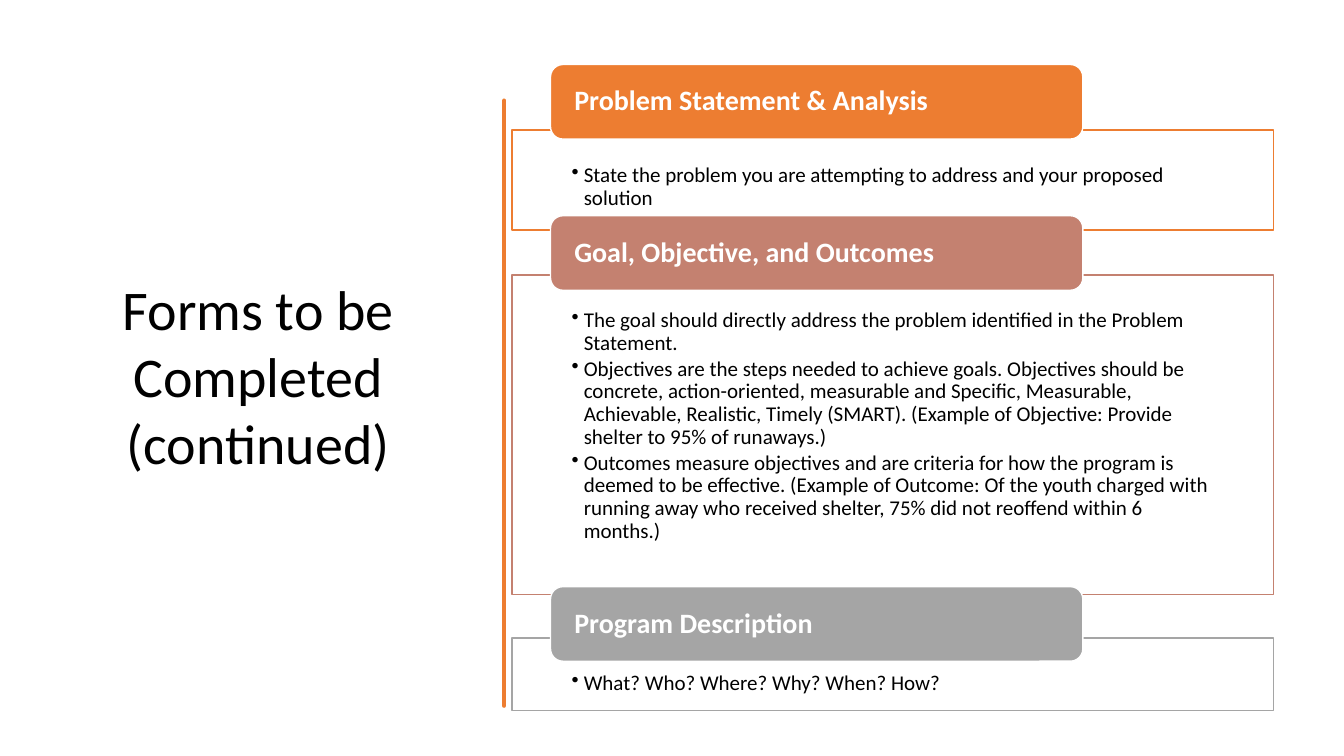
"""Build the slide listing the forms to be completed."""
import pptx
import pptx.util
import pptx.dml.color
import pptx.enum.shapes
import pptx.enum.text
import pptx.oxml.ns
import lxml.etree

Inches = pptx.util.Inches
Pt = pptx.util.Pt
RGBColor = pptx.dml.color.RGBColor
Shape = pptx.enum.shapes.MSO_SHAPE
Align = pptx.enum.text.PP_ALIGN
Anchor = pptx.enum.text.MSO_ANCHOR

ORANGE = RGBColor(0xED, 0x7D, 0x31)
ROSE = RGBColor(0xC4, 0x81, 0x70)
GRAY = RGBColor(0xA5, 0xA5, 0xA5)
WHITE = RGBColor(0xFF, 0xFF, 0xFF)
BLACK = RGBColor(0, 0, 0)

TITLE = "Forms to be Completed (continued)"
SECTIONS = [
    {"heading": "Problem Statement & Analysis", "color": ORANGE,
     "heading_top": 0.64, "body_top": 1.29, "body_height": 0.99,
     "points": ["State the problem you are attempting to address and your proposed solution"]},
    {"heading": "Goal, Objective, and Outcomes", "color": ROSE,
     "heading_top": 2.14, "body_top": 2.73, "body_height": 3.17,
     "points": [
         "The goal should directly address the problem identified in the Problem Statement.",
         "Objectives are the steps needed to achieve goals. Objectives should be concrete, "
         "action-oriented, measurable and Specific, Measurable, Achievable, Realistic, "
         "Timely (SMART). (Example of Objective: Provide shelter to 95% of runaways.)",
         "Outcomes measure objectives and are criteria for how the program is deemed to be "
         "effective. (Example of Outcome: Of the youth charged with running away who received "
         "shelter, 75% did not reoffend within 6 months.)"]},
    {"heading": "Program Description", "color": GRAY,
     "heading_top": 5.82, "body_top": 6.33, "body_height": 0.72,
     "points": ["What? Who? Where? Why? When? How?"]},
]
BODY_LEFT, BODY_WIDTH = 5.08, 7.55
HEADING_LEFT, HEADING_WIDTH, HEADING_HEIGHT = 5.46, 5.28, 0.74
BULLET_INDENT = 0.12

DIVIDER_RIGHT = [(4.75, 0.84), (4.76, 1.15), (4.74, 1.7), (4.75, 2.26), (4.75, 2.94),
                 (4.76, 3.3), (4.75, 3.56), (4.76, 4.0), (4.75, 4.36), (4.73, 4.7),
                 (4.75, 5.1), (4.76, 5.45), (4.75, 5.84), (4.74, 6.2), (4.75, 6.76)]
DIVIDER_LEFT = [(4.73, 6.76), (4.72, 6.4), (4.73, 6.13), (4.73, 5.57), (4.72, 5.1),
                (4.73, 4.77), (4.72, 4.45), (4.73, 4.15), (4.72, 3.75), (4.73, 3.35),
                (4.72, 2.9), (4.73, 2.5), (4.73, 2.1), (4.72, 1.75), (4.74, 1.3), (4.73, 0.84)]


def write_text(box, lines, size, color=BLACK, bold=False, align=Align.LEFT,
               anchor=Anchor.TOP, insets=(0.1, 0.05, 0.1, 0.05), spacing=None,
               after=0, bullet=False):
    frame = box.text_frame
    frame.word_wrap = True
    frame.vertical_anchor = anchor
    (frame.margin_left, frame.margin_top,
     frame.margin_right, frame.margin_bottom) = map(Inches, insets)
    for index, line in enumerate(lines):
        para = frame.add_paragraph() if index else frame.paragraphs[0]
        para.alignment = align
        para.line_spacing = spacing
        para.space_after = Pt(after)
        if bullet:
            para.level = 1
            properties = para._p.get_or_add_pPr()
            properties.set("marL", str(Inches(BULLET_INDENT)))
            properties.set("indent", str(-Inches(BULLET_INDENT)))
            lxml.etree.SubElement(properties, pptx.oxml.ns.qn("a:buChar")).set("char", "•")
        span = para.add_run()
        span.text = line
        span.font.name = "Calibri"
        span.font.size = Pt(size)
        span.font.bold = bold
        span.font.color.rgb = color


def paint(shape, fill, line, width):
    shape.shadow.inherit = False
    shape.fill.solid()
    shape.fill.fore_color.rgb = fill
    shape.line.color.rgb = line
    shape.line.width = Pt(width)


def add_panel(page, kind, left, top, width, height, fill, line):
    panel = page.shapes.add_shape(kind, *map(Inches, (left, top, width, height)))
    paint(panel, fill, line, 1)
    return panel


def add_section(page, section):
    body = add_panel(page, Shape.RECTANGLE, BODY_LEFT, section["body_top"], BODY_WIDTH,
                     section["body_height"], WHITE, section["color"])
    fill_color = body.fill._xPr.find(".//" + pptx.oxml.ns.qn("a:srgbClr"))
    lxml.etree.SubElement(fill_color, pptx.oxml.ns.qn("a:alpha")).set("val", "90000")
    write_text(body, section["points"], 15, insets=(0.59, 0.34, 0.59, 0.12),
               spacing=0.9, after=2.25, bullet=True)
    heading = add_panel(page, Shape.ROUNDED_RECTANGLE, HEADING_LEFT, section["heading_top"],
                        HEADING_WIDTH, HEADING_HEIGHT, section["color"], WHITE)
    write_text(heading, [section["heading"]], 20, color=WHITE, bold=True,
               anchor=Anchor.MIDDLE, insets=(0.2, 0, 0.2, 0), spacing=0.9)


def add_divider(page):
    start, *rest = DIVIDER_RIGHT + DIVIDER_LEFT
    builder = page.shapes.build_freeform(*start, scale=Inches(1))
    builder.add_line_segments(rest, close=True)
    paint(builder.convert_to_shape(), ORANGE, ORANGE, 3.25)


def main():
    deck = pptx.Presentation()
    deck.slide_width, deck.slide_height = Inches(13.33), Inches(7.5)
    page = deck.slides.add_slide(deck.slide_layouts[6])
    add_divider(page)
    for section in SECTIONS:
        add_section(page, section)
    title = page.shapes.add_textbox(*map(Inches, (0.7, 2.67, 3.72, 2.12)))
    write_text(title, [TITLE], 40, align=Align.CENTER)
    deck.save("out.pptx")


if __name__ == "__main__":
    main()
